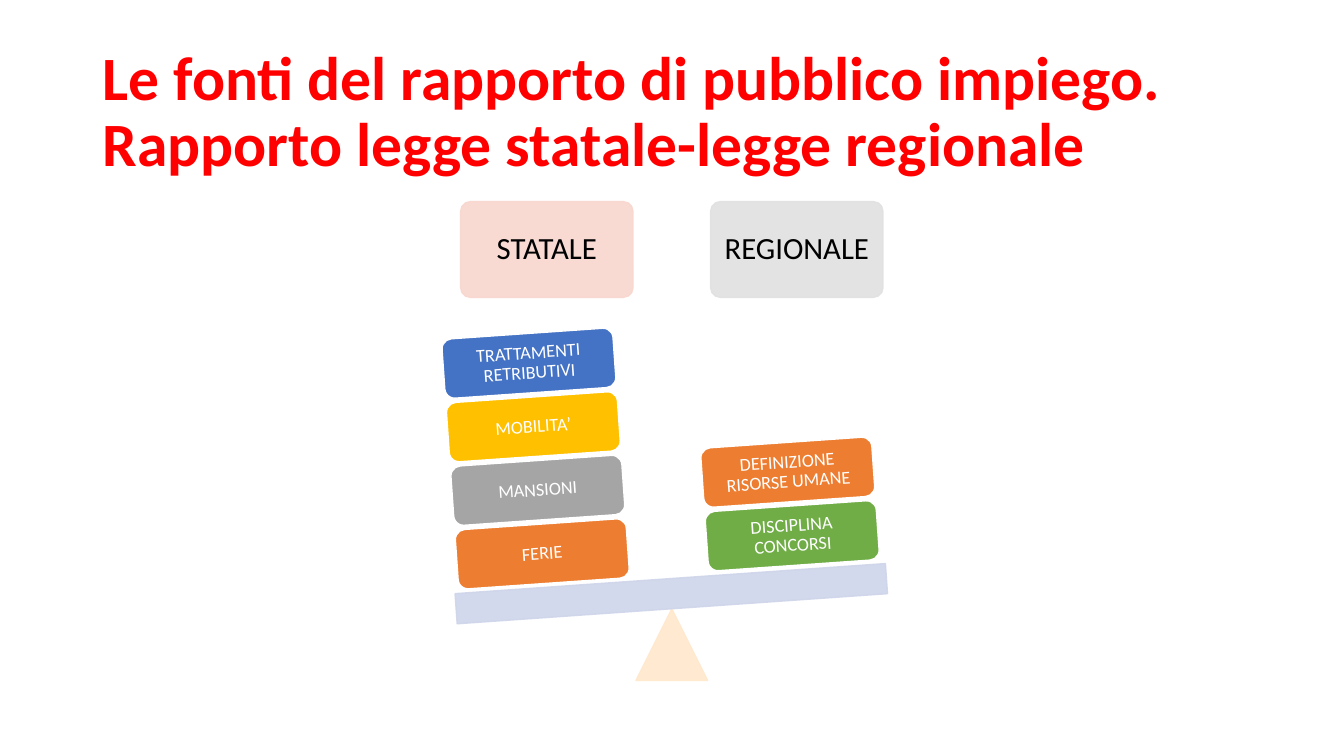
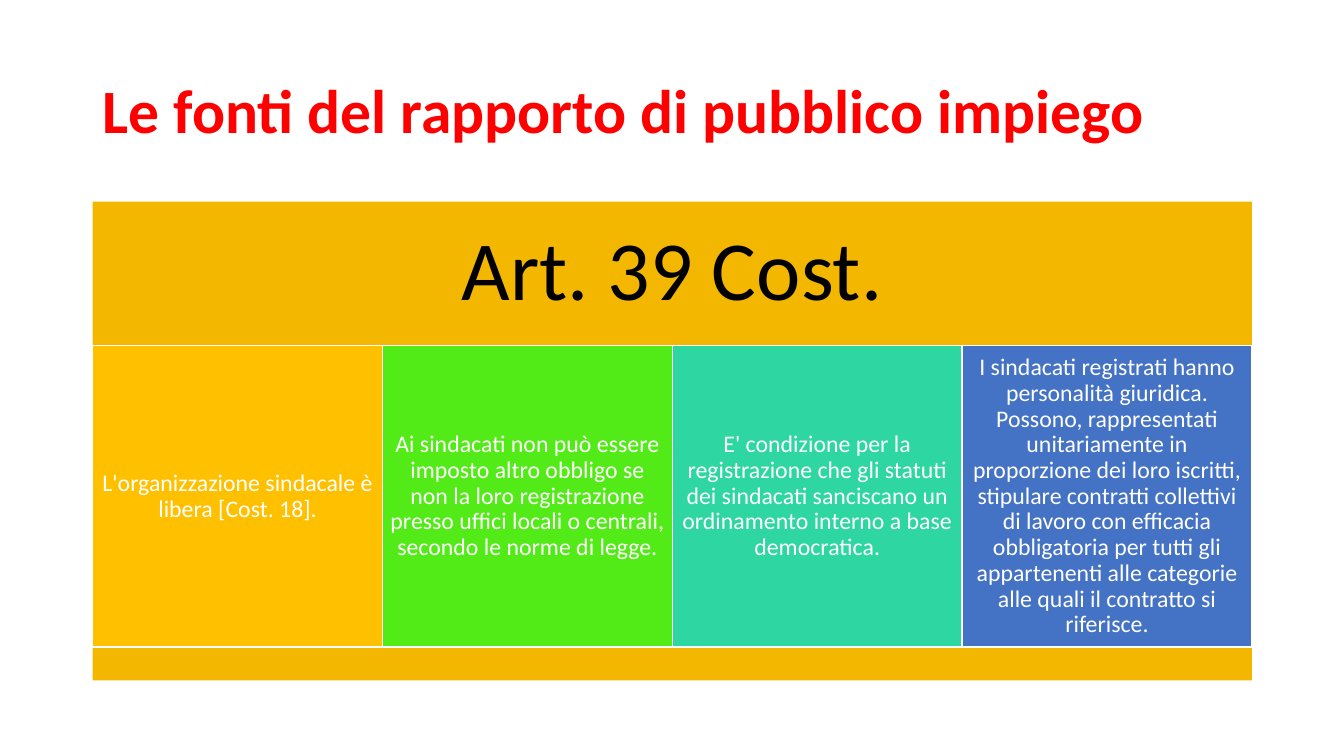
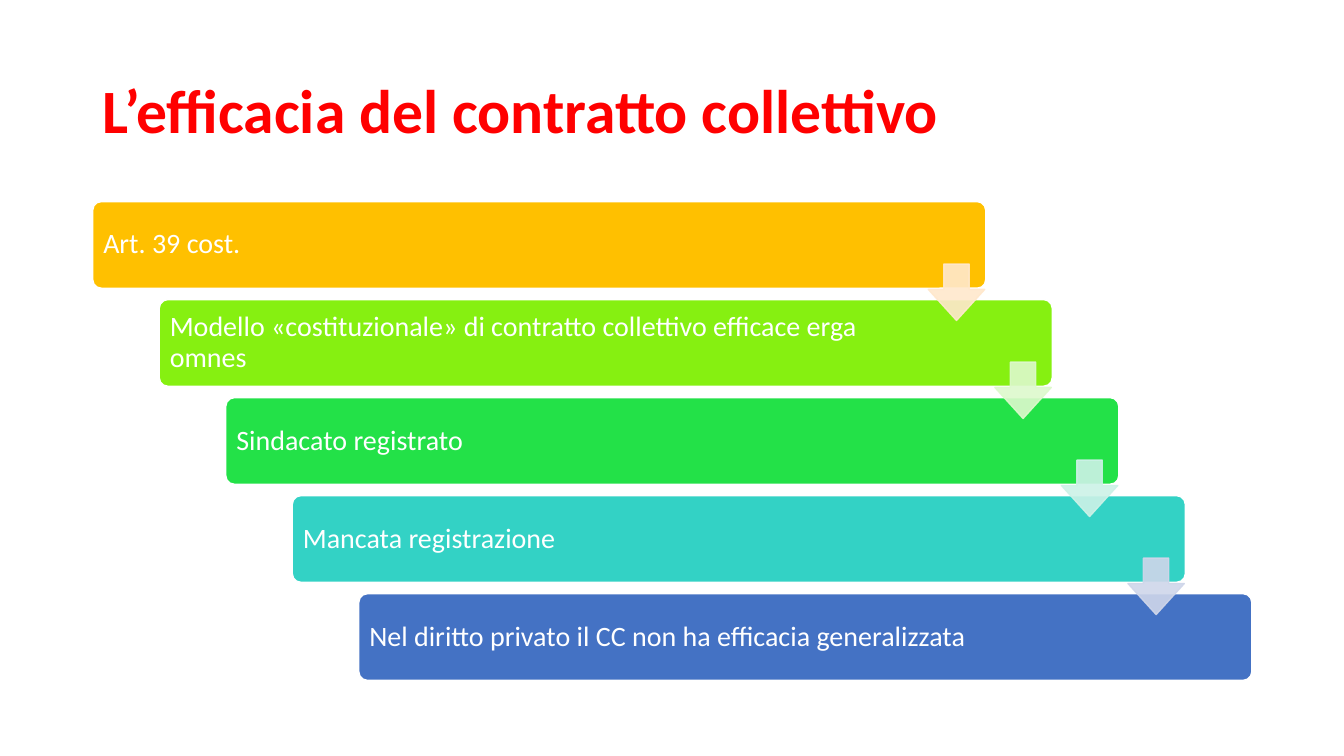
import math
from pptx import Presentation
from pptx.dml.color import RGBColor
from pptx.enum.shapes import MSO_SHAPE
from pptx.enum.text import MSO_ANCHOR, MSO_AUTO_SIZE, PP_ALIGN
from pptx.oxml.ns import qn
from pptx.util import Pt

PX = 9144  # EMU per px, 100 px to the inch
RECT, ROUND = MSO_SHAPE.RECTANGLE, MSO_SHAPE.ROUNDED_RECTANGLE
TRIANGLE, DOWN = MSO_SHAPE.ISOSCELES_TRIANGLE, MSO_SHAPE.DOWN_ARROW
LEFT, CENTER = PP_ALIGN.LEFT, PP_ALIGN.CENTER
MIDDLE, NO_FIT = MSO_ANCHOR.MIDDLE, MSO_AUTO_SIZE.NONE

FONT = "Calibri"
RED, WHITE, BLACK = "FF0000", "FFFFFF", "000000"
GOLD, DARK_GOLD, BLUE = "FFC000", "F4B700", "4472C4"
ORANGE, GRAY, GREEN = "ED7D31", "A5A5A5", "70AD47"
PALE_GOLD, PALE_BLUE = "FFE8CC", "CFD5EA"
TITLE_BOX = (92, 40, 1150, 145)
BODY_BOX = (92, 200, 1150, 475)
TILT = 4  # degrees, anticlockwise


def px(n):
    return round(n * PX)


def color(hex_string):
    return RGBColor.from_string(hex_string)


def write(shape, text, size=13, fill=WHITE, bold=False, align=CENTER, inset=5, right=None):
    tf = shape.text_frame
    tf.word_wrap = True
    tf.auto_size = NO_FIT
    tf.vertical_anchor = MIDDLE
    tf.margin_left = tf.margin_top = tf.margin_bottom = px(inset)
    tf.margin_right = px(inset if right is None else right)
    p = tf.paragraphs[0]
    p.alignment = align
    p.line_spacing = 0.9
    r = p.add_run()
    r.text = text
    r.font.name = FONT
    r.font.size = Pt(size)
    r.font.bold = bold
    r.font.color.rgb = color(fill)


def draw(s, kind, box, fill, line=None, adj=(), alpha=None, turn=0):
    shape = s.shapes.add_shape(kind, *map(px, box))
    shape.shadow.inherit = False
    shape.rotation = turn
    for i, value in enumerate(adj):
        shape.adjustments[i] = value
    shape.fill.solid()
    shape.fill.fore_color.rgb = color(fill)
    if line:
        shape.line.color.rgb = color(line)
        shape.line.width = Pt(1)
    else:
        shape.line.fill.background()
    if alpha:
        for clr in shape.element.spPr.iter(qn("a:srgbClr")):
            clr.makeelement(qn("a:alpha"))
            clr.append(clr.makeelement(qn("a:alpha"), {"val": str(alpha * 1000)}))
    return shape


def pale(s, kind, box, fill, **kw):
    return draw(s, kind, box, fill, line=fill, alpha=90, **kw)


def titled_slide(prs, title):
    s = prs.slides.add_slide(prs.slide_layouts[5])
    sp = s.shapes.title
    sp.left, sp.top, sp.width, sp.height = map(px, TITLE_BOX)
    write(sp, title, size=44, fill=RED, bold=True, align=LEFT, inset=5)
    sp.text_frame.margin_left = sp.text_frame.margin_right = px(10)
    return s


def balance(s, x, y, w, h, sides):
    mid = x + w / 2
    # Fulcrum and tilted plank
    pale(s, TRIANGLE, (mid - 36, y + h - 71, 71, 71), PALE_GOLD)
    pale(s, RECT, (mid - 215, y + 374, 428, 30), PALE_BLUE, turn=360 - TILT)
    # Heading and stack of weights on each side
    step = 63.2
    dx = step * math.sin(math.radians(TILT))
    dy = step * math.cos(math.radians(TILT))
    for side, (heading, fill, base, weights) in enumerate(sides):
        left = mid - 210 + 248 * side
        card = pale(s, ROUND, (left, y, 171, 95), fill, adj=[0.1])
        write(card, heading, size=22, fill=BLACK, inset=9)
        for i, (text, weight_fill) in enumerate(weights):
            box = (left - 4 - dx * i, y + base - dy * i, 170, 59)
            weight = draw(s, ROUND, box, weight_fill, line=WHITE, turn=360 - TILT)
            write(weight, text)


def article_columns(s, x, y, w, h, heading, columns):
    head_h, foot_h = 143, 33
    # Header and footer bands
    band = draw(s, RECT, (x, y, w, head_h), DARK_GOLD)
    write(band, heading, size=60, fill=BLACK, inset=25)
    draw(s, RECT, (x, y + h - foot_h, w, foot_h), DARK_GOLD)
    # Equal columns between the bands
    col_w = w / len(columns)
    for i, (text, fill) in enumerate(columns):
        box = (x + i * col_w, y + head_h, col_w, h - head_h - foot_h)
        write(draw(s, RECT, box, fill, line=WHITE), text, size=17, inset=7)


def staircase(s, x, y, w, h, steps, arrow_fills):
    step_w, step_h, arrow = 886, 86, 56
    dx = (w - step_w) / (len(steps) - 1)
    dy = (h - step_h) / (len(steps) - 1)
    # Steps
    for i, (text, fill) in enumerate(steps):
        box = (x + i * dx, y + i * dy, step_w, step_h)
        step = draw(s, ROUND, box, fill, line=WHITE, adj=[0.1])
        write(step, text, size=20, align=LEFT, inset=8, right=131)
    # Arrows from each step to the next
    for i, fill in enumerate(arrow_fills):
        box = (x + i * dx + step_w - arrow - 1, y + i * dy + 62, arrow, arrow)
        pale(s, DOWN, box, fill, adj=[0.45, 0.55])


def main():
    prs = Presentation()
    prs.slide_width, prs.slide_height = px(1333.33), px(750)

    s = titled_slide(prs, "Le fonti del rapporto di pubblico impiego. Rapporto legge statale-legge regionale")
    balance(s, *BODY_BOX, [
        ("STATALE", "F8D7CE", 320, [
            ("FERIE", ORANGE), ("MANSIONI", GRAY), ("MOBILITA’", GOLD),
            ("TRATTAMENTI RETRIBUTIVI", BLUE)]),
        ("REGIONALE", "E1E1E1", 302, [
            ("DISCIPLINA CONCORSI", GREEN), ("DEFINIZIONE RISORSE UMANE", ORANGE)]),
    ])

    s = titled_slide(prs, "Le fonti del rapporto di pubblico impiego")
    article_columns(s, *BODY_BOX, "Art. 39 Cost.", [
        ("L'organizzazione sindacale è libera [Cost. 18].", GOLD),
        ("Ai sindacati non può essere imposto altro obbligo se non la loro registrazione "
         "presso uffici locali o centrali, secondo le norme di legge.", "53EB17"),
        ("E' condizione per la registrazione che gli statuti dei sindacati sanciscano "
         "un ordinamento interno a base democratica.", "2ED7A1"),
        ("I sindacati registrati hanno personalità giuridica. Possono, rappresentati "
         "unitariamente in proporzione dei loro iscritti, stipulare contratti collettivi "
         "di lavoro con efficacia obbligatoria per tutti gli appartenenti alle categorie "
         "alle quali il contratto si riferisce.", BLUE),
    ])

    s = titled_slide(prs, "L’efficacia del contratto collettivo")
    staircase(s, *BODY_BOX, [
        ("Art. 39 cost.", GOLD),
        ("Modello «costituzionale» di contratto collettivo efficace erga omnes", "86F011"),
        ("Sindacato registrato", "23E148"),
        ("Mancata registrazione", "33D2C5"),
        ("Nel diritto privato il CC non ha efficacia generalizzata", BLUE),
    ], [PALE_GOLD, "DDF9CC", "CDF2E7", "CFD6EA"])

    prs.save("out.pptx")


if __name__ == "__main__":
    main()
